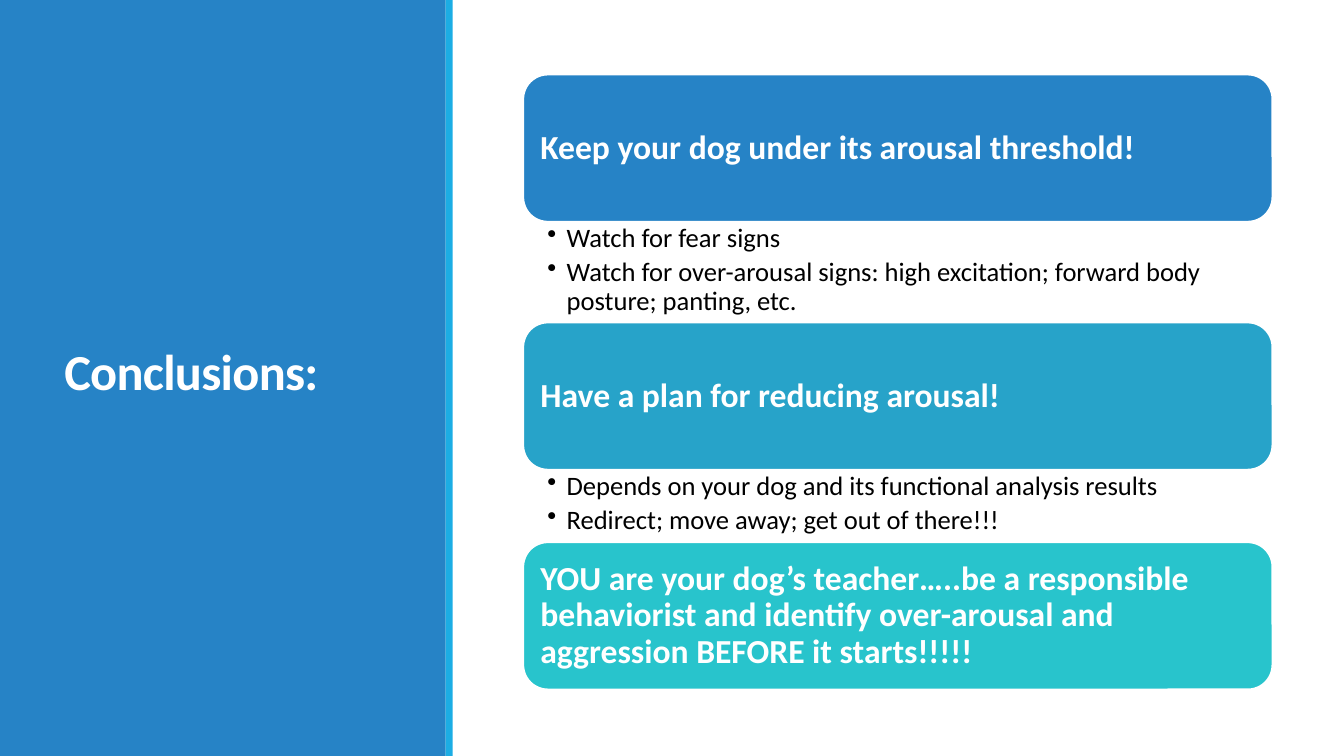
from pptx import Presentation
from pptx.dml.color import RGBColor
from pptx.enum.shapes import MSO_SHAPE
from pptx.enum.text import MSO_ANCHOR, PP_ALIGN
from pptx.oxml.ns import qn
from pptx.util import Inches, Pt
from lxml.etree import SubElement

WIDTH, HEIGHT = 13.33, 7.5
FONT = "Calibri"
WHITE = RGBColor(0xFF, 0xFF, 0xFF)
BLACK = RGBColor(0, 0, 0)
BLUE = RGBColor(0x26, 0x83, 0xC6)
SKY = RGBColor(0x1C, 0xAD, 0xE4)
OCEAN = RGBColor(0x27, 0xA3, 0xC9)
TURQUOISE = RGBColor(0x28, 0xC4, 0xCC)

CARD_HEIGHT = 1.46
BULLET_INDENT = 0.19

# Heading, card colour, bullets, height of the bullet area
CONCLUSIONS = [
    ("Keep your dog under its arousal threshold!", BLUE,
     ["Watch for fear signs",
      "Watch for over-arousal signs: high excitation; forward body posture; panting, etc."],
     1.0),
    ("Have a plan for reducing arousal!", OCEAN,
     ["Depends on your dog and its functional analysis results",
      "Redirect; move away; get out of there!!!"],
     0.72),
    ("YOU are your dog’s teacher…..be a responsible behaviorist and identify "
     "over-arousal and aggression BEFORE it starts!!!!!", TURQUOISE, [], 0),
]


def add_box(slide, box, color, kind=MSO_SHAPE.RECTANGLE, outline=None):
    shape = slide.shapes.add_shape(kind, *map(Inches, box))
    shape.shadow.inherit = False
    shape.fill.solid()
    shape.fill.fore_color.rgb = color
    if outline is None:
        shape.line.fill.background()
    else:
        shape.line.color.rgb = outline
        shape.line.width = Pt(1.25)
    return shape


def add_bullet(paragraph):
    properties = paragraph._p.get_or_add_pPr()
    properties.set("marL", str(Inches(BULLET_INDENT)))
    properties.set("indent", str(-Inches(BULLET_INDENT)))
    SubElement(properties, qn("a:buChar")).set("char", "•")


def write_text(shape, lines, size, color=WHITE, bold=False, anchor=MSO_ANCHOR.MIDDLE,
               insets=(0.1, 0.1, 0.1, 0.1), line_spacing=0.9, space_after=0,
               bullets=False, tracking=0):
    """Fill a shape with one paragraph per line; insets run left, top, right, bottom."""
    frame = shape.text_frame
    frame.word_wrap = True
    frame.vertical_anchor = anchor
    (frame.margin_left, frame.margin_top,
     frame.margin_right, frame.margin_bottom) = map(Inches, insets)
    for index, line in enumerate(lines):
        paragraph = frame.add_paragraph() if index else frame.paragraphs[0]
        paragraph.alignment = PP_ALIGN.LEFT
        paragraph.line_spacing = line_spacing
        paragraph.space_after = Pt(space_after)
        if bullets:
            add_bullet(paragraph)
        run = paragraph.add_run()
        run.text = line
        run.font.name = FONT
        run.font.size = Pt(size)
        run.font.bold = bold
        run.font.color.rgb = color
        if tracking:
            run.font._element.set("spc", str(round(tracking * 100)))


def add_title_panel(slide, left, top, width, height, title):
    stripe = 0.07
    add_box(slide, (left, top, width - stripe, height), BLUE)
    add_box(slide, (left + width - stripe, top, stripe, height), SKY)
    box = (left + 0.12 * width, top + 0.076 * height, 0.75 * width, 0.84 * height)
    write_text(slide.shapes.add_textbox(*map(Inches, box)), [title], 36, bold=True,
               insets=(0.1, 0.05, 0.1, 0.05), line_spacing=0.85, tracking=-0.5)


def add_conclusions(slide, left, top, width, conclusions):
    """Stack the cards downwards, each followed by its bullets."""
    for heading, color, bullets, bullets_height in conclusions:
        card = add_box(slide, (left, top, width, CARD_HEIGHT), color,
                       MSO_SHAPE.ROUNDED_RECTANGLE, outline=WHITE)
        write_text(card, [heading], 24, bold=True)
        top += CARD_HEIGHT
        if bullets:
            box = (left, top, width, bullets_height)
            write_text(slide.shapes.add_textbox(*map(Inches, box)), bullets, 19,
                       color=BLACK, anchor=MSO_ANCHOR.TOP,
                       insets=(0.24, 0.03, 0.19, 0.03), space_after=3.8, bullets=True)
        top += bullets_height


def main():
    presentation = Presentation()
    presentation.slide_width = Inches(WIDTH)
    presentation.slide_height = Inches(HEIGHT)
    slide = presentation.slides.add_slide(presentation.slide_layouts[6])
    slide.background.fill.solid()
    slide.background.fill.fore_color.rgb = WHITE
    add_title_panel(slide, 0, 0, 4.49, HEIGHT, "Conclusions:")
    add_conclusions(slide, 5.19, 0.74, 7.43, CONCLUSIONS)
    presentation.save("out.pptx")


if __name__ == "__main__":
    main()
